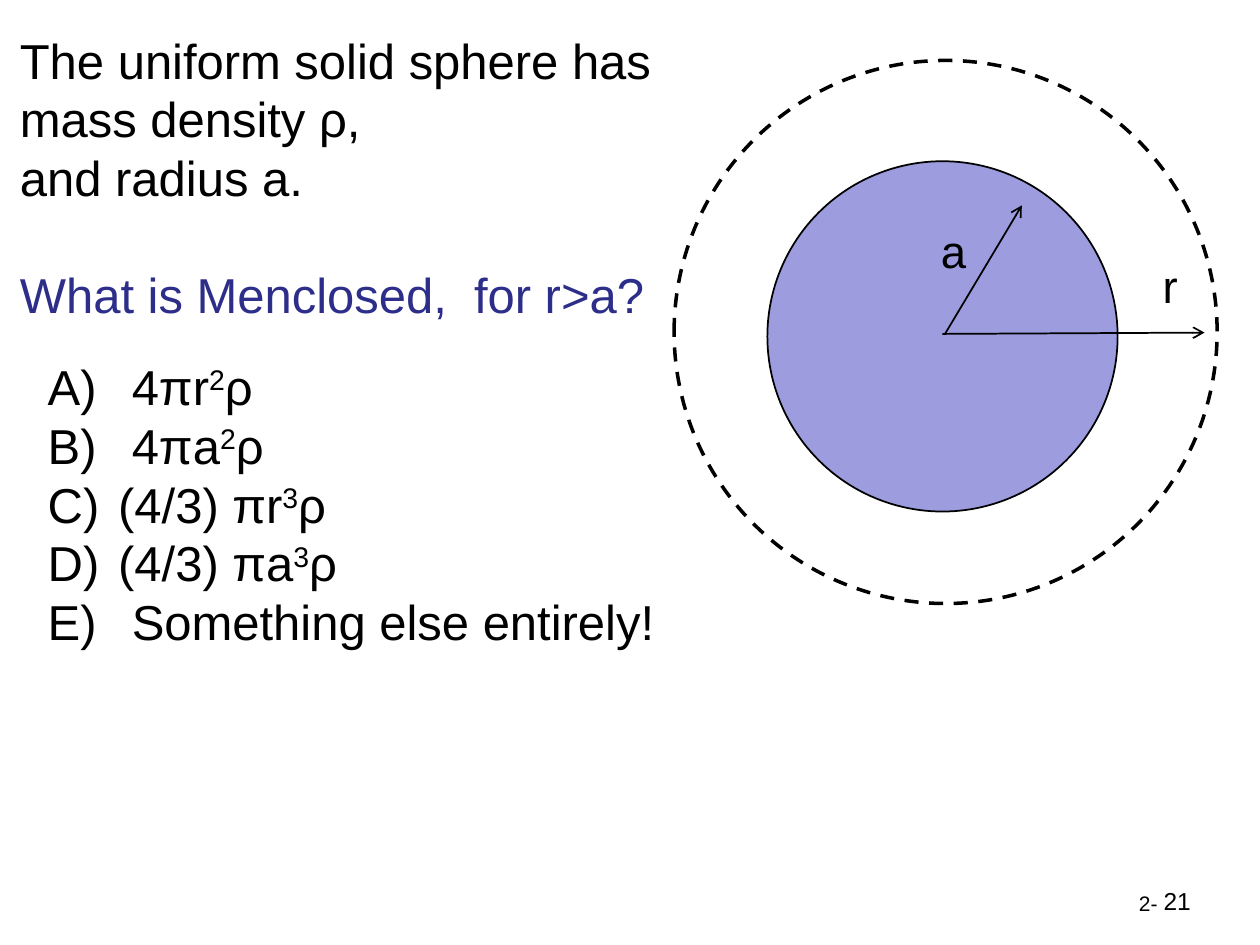
import pptx
import pptx.util
import pptx.dml.color
import pptx.enum.dml
import pptx.enum.shapes
import pptx.enum.text
import pptx.oxml.ns
from lxml import etree

Inches = pptx.util.Inches
Pt = pptx.util.Pt
RGB = pptx.dml.color.RGBColor
qn = pptx.oxml.ns.qn
ALIGN = pptx.enum.text.PP_ALIGN

BLACK = RGB(0, 0, 0)
BLUE = RGB(0x2D, 0x2D, 0x8A)
LILAC = RGB(0x9C, 0x9C, 0xDF)

INTRO = ["The uniform solid sphere has\vmass density ρ,", "and radius a."]
ASK = "What is Menclosed,  for r>a?"
CHOICES = [
    (" 4πr", "2", "ρ"),
    (" 4πa", "2", "ρ"),
    ("(4/3) πr", "3", "ρ"),
    ("(4/3) πa", "3", "ρ"),
    (" Something else entirely!",),
]
LABELS = [
    ("r", (9.13, 2, 0.33, 0.54), 26, ALIGN.LEFT, False),
    ("a", (7.37, 1.72, 0.4, 0.54), 26, ALIGN.LEFT, False),
    ("2-", (8.94, 7.02, 0.48, 0.3), 12, ALIGN.LEFT, True),
    ("21", (7.22, 6.98, 2.33, 0.52), 14, ALIGN.RIGHT, True),
]
CIRCLES = [
    ((6.09, 1.28, 2.78), LILAC, 1, None),
    ((5.35, 0.48, 4.31), None, 2, pptx.enum.dml.MSO_LINE.DASH),
]
ARROWS = [(7.48, 2.65, 9.56, 2.64), (7.5, 2.65, 8.11, 1.63)]


def style(para, size, color=BLACK):
    para.font.name = "Arial"
    para.font.size = Pt(size)
    para.font.color.rgb = color


def add_text(slide, at, lines, size, wrap=True):
    frame = slide.shapes.add_textbox(*map(Inches, at)).text_frame
    frame.word_wrap = wrap
    frame.text = "\n".join(lines)
    for para in frame.paragraphs:
        style(para, size)
    return frame


def add_choices(slide):
    frame = add_text(slide, (0.28, 2.78, 9.19, 2.93), [""] * len(CHOICES), 28)
    for para, parts in zip(frame.paragraphs, CHOICES):
        for part in parts:
            run = para.add_run()
            run.text = part
            if part.isdigit():
                run.font._element.set("baseline", "30000")
        props = para._p.get_or_add_pPr()
        props.set("marL", str(Inches(0.56)))
        props.set("indent", str(-Inches(0.56)))
        mark = etree.Element(qn("a:buAutoNum"), type="alphaUcParenR")
        props.insert(0, mark)


def add_circle(slide, at, fill, width, dash):
    left, top, size = map(Inches, at)
    oval = pptx.enum.shapes.MSO_SHAPE.OVAL
    ring = slide.shapes.add_shape(oval, left, top, size, size)
    ring.shadow.inherit = False
    if fill is None:
        ring.fill.background()
    else:
        ring.fill.solid()
        ring.fill.fore_color.rgb = fill
    ring.line.color.rgb = BLACK
    ring.line.width = Pt(width)
    if dash:
        ring.line.dash_style = dash


def add_arrow(slide, ends):
    kind = pptx.enum.shapes.MSO_CONNECTOR.STRAIGHT
    arrow = slide.shapes.add_connector(kind, *map(Inches, ends))
    arrow.line.color.rgb = BLACK
    arrow.line.width = Pt(1)
    props = arrow._element.spPr
    etree.SubElement(props.find(qn("a:ln")), qn("a:tailEnd"), type="arrow")
    etree.SubElement(props, qn("a:effectLst"))


def main():
    deck = pptx.Presentation()
    deck.slide_width, deck.slide_height = Inches(10), Inches(7.5)
    slide = deck.slides.add_slide(deck.slide_layouts[6])

    frame = add_text(slide, (0.06, 0.19, 8.93, 2.46), INTRO + [ASK], 28)
    ask = frame.paragraphs[-1]
    style(ask, 28, BLUE)
    ask.space_before = Pt(33)
    add_choices(slide)

    for circle in CIRCLES:
        add_circle(slide, *circle)
    for ends in ARROWS:
        add_arrow(slide, ends)
    for text, at, size, align, wrap in LABELS:
        label = add_text(slide, at, [text], size, wrap)
        label.paragraphs[0].alignment = align

    deck.save("out.pptx")


if __name__ == "__main__":
    main()
